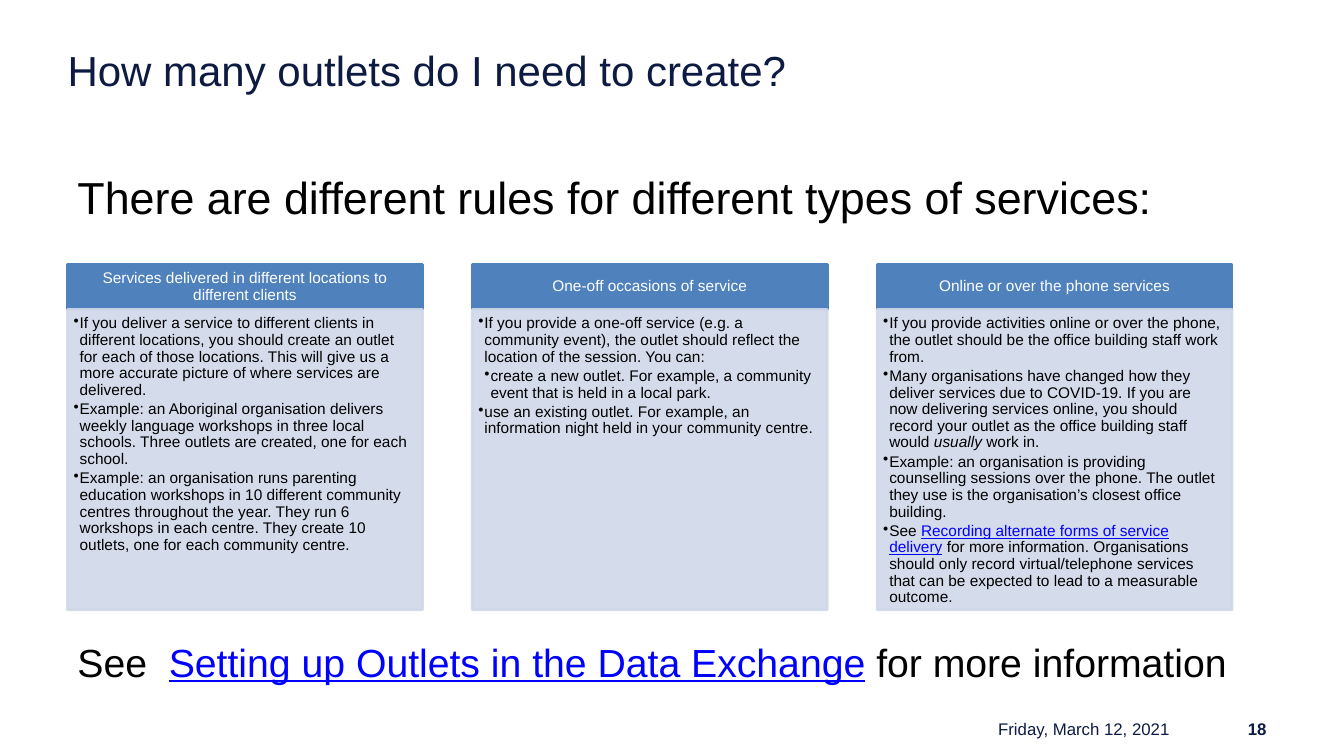
from dataclasses import dataclass
from lxml import etree
from pptx import Presentation
from pptx import util as u
from pptx.dml import color as dml
from pptx.enum import shapes, text
from pptx.oxml import ns


@dataclass(frozen=True)
class Theme:
    font: str = "Arial"
    ink: str = "000000"
    navy: str = "0D1B43"
    white: str = "FFFFFF"
    link: str = "0000FF"
    header: str = "4F81BD"
    panel: str = "D0D8E8"
    title_size: int = 30
    lead_size: int = 32
    closing_size: int = 28
    footer_size: int = 12
    card_size: int = 11


THEME = Theme()
LINK = {"color": THEME.link, "underline": True}
ITALIC = {"italic": True}

CARDS = [
    ("Services delivered in different locations to different clients", [
        (1, ["If you deliver a service to different clients in different locations, you should create an outlet for each of those locations. This will give us a more accurate picture of where services are delivered."]),
        (1, ["Example: an Aboriginal organisation delivers weekly language workshops in three local schools. Three outlets are created, one for each school."]),
        (1, ["Example: an organisation runs parenting education workshops in 10 different community centres throughout the year. They run 6 workshops in each centre. They create 10 outlets, one for each community centre."]),
    ]),
    ("One-off occasions of service", [
        (1, ["If you provide a one-off service (e.g. a community event), the outlet should reflect the location of the session. You can:"]),
        (2, ["create a new outlet. For example, a community event that is held in a local park."]),
        (1, ["use an existing outlet. For example, an information night held in your community centre."]),
    ]),
    ("Online or over the phone services", [
        (1, ["If you provide activities online or over the phone, the outlet should be the office building staff work from."]),
        (1, ["Many organisations have changed how they deliver services due to COVID-19. If you are now delivering services online, you should record your outlet as the office building staff would ",
             ("usually", ITALIC), " work in."]),
        (1, ["Example: an organisation is providing counselling sessions over the phone. The outlet they use is the organisation’s closest office building."]),
        (1, ["See ", ("Recording alternate forms of service delivery", LINK),
             " for more information. Organisations should only record virtual/telephone services that can be expected to lead to a measurable outcome."]),
    ]),
]


def inches(box):
    return [u.Inches(value) for value in box]


def set_frame(frame, insets, anchor=text.MSO_ANCHOR.TOP):
    left, top, right, bottom = inches(insets)
    values = {"word_wrap": True, "auto_size": text.MSO_AUTO_SIZE.NONE,
              "vertical_anchor": anchor, "margin_left": left, "margin_top": top,
              "margin_right": right, "margin_bottom": bottom}
    for name, value in values.items():
        setattr(frame, name, value)


def write(para, spans, size, color=THEME.ink, bold=False, **layout):
    for name, value in layout.items():
        setattr(para, name, value)
    for item in spans:
        words, extra = item if isinstance(item, tuple) else (item, {})
        span = para.add_run()
        span.text = words
        values = {"name": THEME.font, "size": u.Pt(size), "bold": bold, **extra}
        span.font.color.rgb = dml.RGBColor.from_string(values.pop("color", color))
        for name, value in values.items():
            setattr(span.font, name, value)


def add_bullet(para, level):
    props = para._p.get_or_add_pPr()
    props.set("marL", str(u.Inches(0.06 * level)))
    props.set("indent", str(u.Inches(-0.06)))
    etree.SubElement(props, ns.qn("a:buChar")).set("char", "•")


def add_title(slide, box, words):
    title = slide.shapes.title
    title.left, title.top, title.width, title.height = inches(box)
    set_frame(title.text_frame, (0, 0.04, 0, 0))
    write(title.text_frame.paragraphs[0], [words], THEME.title_size, THEME.navy,
          alignment=text.PP_ALIGN.LEFT)


def add_statement(slide, box, spans, size):
    frame = slide.shapes.add_textbox(*inches(box)).text_frame
    set_frame(frame, (0.1, 0.05, 0.1, 0.05))
    write(frame.paragraphs[0], spans, size)


def add_panel(slide, box, color, opacity=100):
    panel = slide.shapes.add_shape(shapes.MSO_SHAPE.RECTANGLE, *inches(box))
    panel.shadow.inherit = False
    panel.line.width = u.Pt(2)
    for paint in (panel.fill, panel.line.fill):
        paint.solid()
        paint.fore_color.rgb = dml.RGBColor.from_string(color)
    if opacity < 100:
        for tint in panel._element.spPr.iter(ns.qn("a:srgbClr")):
            etree.SubElement(tint, ns.qn("a:alpha")).set("val", str(opacity * 1000))
    return panel.text_frame


def add_card(slide, box, heading, points):
    left, top, width, height = box
    header_height = 0.45
    header = add_panel(slide, (left, top, width, header_height), THEME.header)
    set_frame(header, (0.09, 0.05, 0.09, 0.05), text.MSO_ANCHOR.MIDDLE)
    write(header.paragraphs[0], [heading], THEME.card_size, THEME.white,
          alignment=text.PP_ALIGN.CENTER, line_spacing=0.9)

    body_box = (left, top + header_height, width, height - header_height)
    body = add_panel(slide, body_box, THEME.panel, opacity=90)
    set_frame(body, (0.06, 0.06, 0.09, 0.1))
    for index, (level, spans) in enumerate(points):
        para = body.add_paragraph() if index else body.paragraphs[0]
        add_bullet(para, level)
        write(para, spans, THEME.card_size, alignment=text.PP_ALIGN.LEFT,
              line_spacing=0.9, space_after=u.Pt(1.9), level=level - 1)


def add_cards(slide, box, cards):
    left, top, width, height = box
    card_width = 3.52
    step = (width - card_width) / (len(cards) - 1)
    for index, (heading, points) in enumerate(cards):
        add_card(slide, (left + index * step, top, card_width, height), heading, points)


def add_footer(slide, box, date, number):
    left, top, width, height = box
    right = left + width
    for words, start, end, bold in ((date, left, 11.7, False), (number, 11.57, right, True)):
        label = slide.shapes.add_textbox(*inches((start, top, end - start, height)))
        set_frame(label.text_frame, (0.1, 0.05, 0.1, 0.05), text.MSO_ANCHOR.MIDDLE)
        write(label.text_frame.paragraphs[0], [words], THEME.footer_size, THEME.navy,
              bold, alignment=text.PP_ALIGN.RIGHT)


def main():
    deck = Presentation()
    deck.slide_width, deck.slide_height = inches((13.33, 7.5))
    slide = deck.slides.add_slide(deck.slide_layouts[5])
    add_title(slide, (0.67, 0.4, 12, 0.66), "How many outlets do I need to create?")
    add_statement(slide, (0.67, 1.63, 12, 0.65),
                  ["There are different rules for different types of services:"],
                  THEME.lead_size)
    add_cards(slide, (0.67, 2.62, 11.55, 3.43), CARDS)
    add_statement(slide, (0.67, 6.28, 12, 0.55),
                  ["See  ", ("Setting up Outlets in the Data Exchange", LINK),
                   " for more information"], THEME.closing_size)
    add_footer(slide, (8.59, 7.12, 4.07, 0.23), "Friday, March 12, 2021", "18")
    deck.save("out.pptx")


if __name__ == "__main__":
    main()
